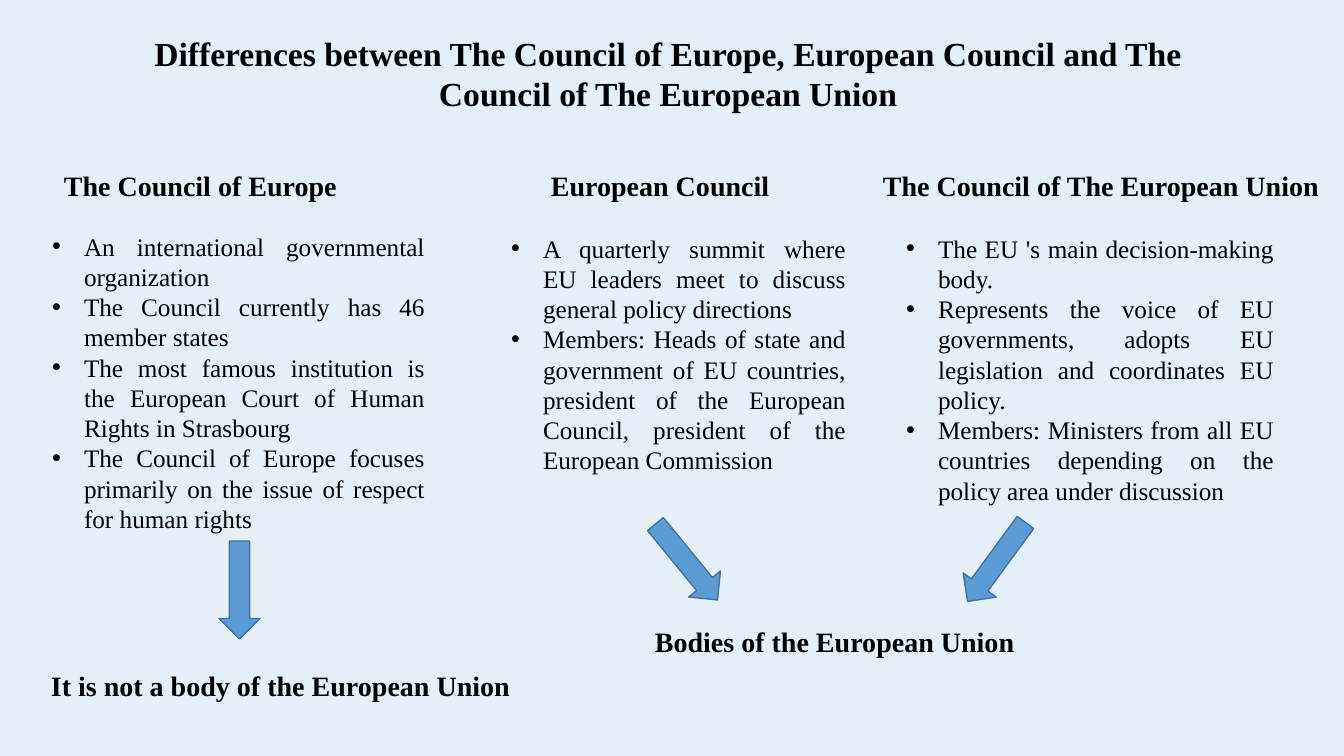
from lxml.etree import SubElement
from pptx import Presentation
from pptx.dml.color import RGBColor
from pptx.enum.shapes import MSO_SHAPE
from pptx.enum.text import MSO_ANCHOR, MSO_AUTO_SIZE, PP_ALIGN
from pptx.oxml.ns import qn
from pptx.util import Inches, Pt

FONT = "Times New Roman"
BLACK, BACKGROUND, ARROW_FILL, ARROW_LINE = "000000", "E5EFF8", "5B9BD5", "43739E"

TITLE = ("Differences between The Council of Europe, European Council and "
         "The Council of The European Union", (101, 28, 1134, 92))

LABELS = [
    ("The Council of Europe", (54, 164, 312, 44)),
    ("European Council", (541, 164, 254, 44)),
    ("The Council of The European Union", (873, 164, 460, 44)),
    ("Bodies of the European Union", (645, 620, 383, 44)),
    ("It is not a body of the European Union", (41, 664, 482, 44)),
]

BODIES = [
    ((42, 226, 393, 316), [
        "An international governmental organization",
        "The Council currently has 46 member states",
        "The most famous institution is the European Court of Human Rights in Strasbourg",
        "The Council of Europe focuses primarily on the issue of respect for human rights",
    ]),
    ((501, 228, 355, 254), [
        "A quarterly summit where EU leaders meet to discuss general policy directions",
        "Members: Heads of state and government of EU countries, president of the "
        "European Council, president of the European Commission",
    ]),
    ((896, 228, 388, 285), [
        "The EU 's main decision-making body.",
        "Represents the voice of EU governments, adopts EU legislation and "
        "coordinates EU policy.",
        "Members: Ministers from all EU countries depending on the policy area "
        "under discussion",
    ]),
]

ARROW_SIZE = (41, 98)
ARROWS = [(219, 541, 0), (666, 513, 320.7), (976, 513, 36.2)]


def px(length):
    return Inches(length / 100.8)


def color(hex_string):
    return RGBColor.from_string(hex_string)


def place(shape, box):
    shape.left, shape.top, shape.width, shape.height = map(px, box)


def write(shape, lines, size, bold, align, bulleted=False):
    frame = shape.text_frame
    frame.word_wrap = True
    frame.auto_size = MSO_AUTO_SIZE.NONE
    frame.vertical_anchor = MSO_ANCHOR.TOP
    frame.text = "\n".join(lines)
    for paragraph in frame.paragraphs:
        paragraph.alignment = align
        paragraph.space_before = Pt(0)
        paragraph.line_spacing = 1.0
        if bulleted:
            properties = paragraph._p.get_or_add_pPr()
            properties.set("marL", str(px(32)))
            properties.set("indent", str(px(-32)))
            SubElement(properties, qn("a:buFont"), typeface="Arial")
            SubElement(properties, qn("a:buChar"), char="•")
        font = paragraph.font
        font.name, font.size, font.bold = FONT, Pt(size), bold
        font.color.rgb = color(BLACK)


def main():
    deck = Presentation()
    deck.slide_width, deck.slide_height = px(1344), px(756)
    slide = deck.slides.add_slide(deck.slide_layouts.get_by_name("Comparison"))
    slide.background.fill.solid()
    slide.background.fill.fore_color.rgb = color(BACKGROUND)

    heading, *bodies = slide.placeholders
    title, title_box = TITLE
    place(heading, title_box)
    write(heading, [title], 24, True, PP_ALIGN.CENTER)

    for body, (box, points) in zip(bodies, BODIES):
        place(body, box)
        write(body, points, 18, False, PP_ALIGN.JUSTIFY, bulleted=True)
    for unused in bodies[len(BODIES):]:
        unused.element.getparent().remove(unused.element)

    for label, box in LABELS:
        caption = slide.shapes.add_textbox(*map(px, box))
        write(caption, [label], 20, True, PP_ALIGN.LEFT)

    for left, top, rotation in ARROWS:
        arrow = slide.shapes.add_shape(
            MSO_SHAPE.DOWN_ARROW, *map(px, (left, top, *ARROW_SIZE)))
        arrow.rotation = rotation
        arrow.shadow.inherit = False
        arrow.fill.solid()
        arrow.fill.fore_color.rgb = color(ARROW_FILL)
        arrow.line.color.rgb = color(ARROW_LINE)
        arrow.line.width = Pt(1)

    deck.save("out.pptx")


if __name__ == "__main__":
    main()
